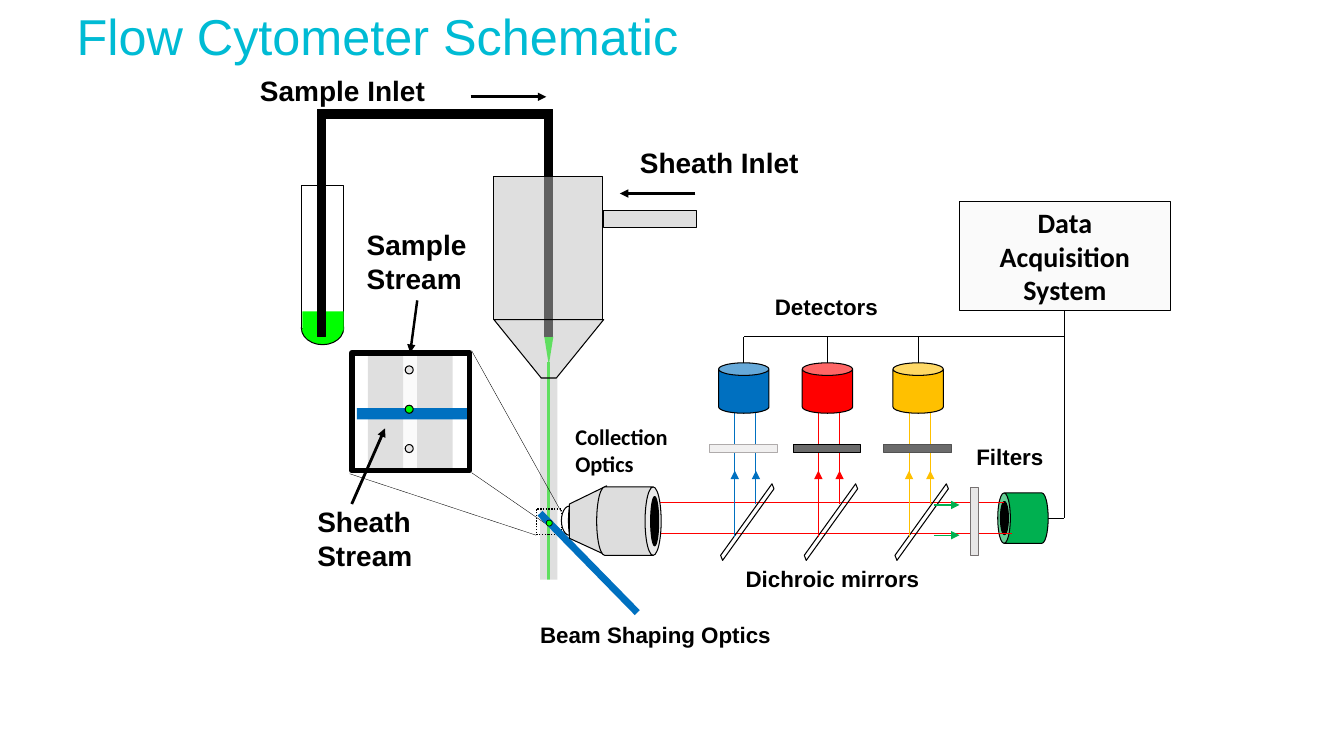
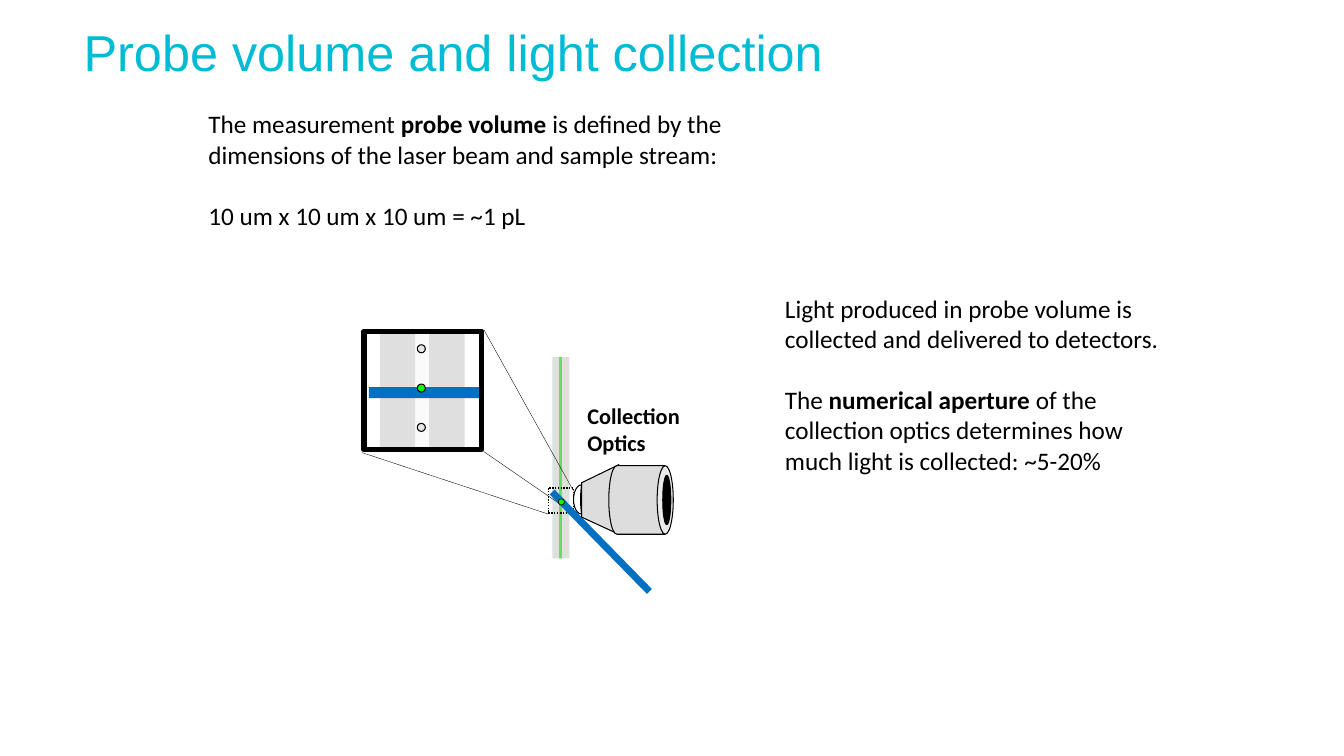
from dataclasses import dataclass

from lxml import etree
from pptx import Presentation, util as u
from pptx.dml.color import RGBColor
from pptx.enum import dml, shapes, text
from pptx.oxml.ns import qn

INK = {
    "title": "00BBD4", "black": "000000", "white": "FFFFFF", "pale": "FAFAFA",
    "sheath": "C0C0C0", "lens": "DDDDDD", "cell": "E7E6E6", "lime": "00FF00",
    "laser": "0070C0", "red": "FF0000", "gold": "FFC000", "green": "00B050",
    "light": "F1F0F0", "rim": "AFABAB", "dark": "6B6B6B", "edge": "525252",
    "glass": "767171",
}
KIND = shapes.MSO_SHAPE
MID = text.PP_ALIGN.CENTER
Point = tuple[float, float]


@dataclass
class Label:
    words: str
    x: float
    y: float
    w: float
    size: int = 20
    face: str = "Arial"
    align: text.PP_ALIGN = text.PP_ALIGN.LEFT


@dataclass
class Channel:
    x: float
    ink: str
    pane: str
    rim: str


@dataclass
class Note:
    x: float
    y: float
    w: float
    h: float
    paras: list[list[tuple[str, bool]]]


LABELS = [
    Label("Sample Inlet", 2.48, 0.68, 2.1),
    Label("Sheath Inlet", 6.25, 1.39, 2.9),
    Label("Sample\nStream", 3.54, 2.21, 1.4),
    Label("Sheath\nStream", 3.05, 4.96, 1.4),
    Label("Beam Shaping Optics", 5.26, 6.11, 2.8, 16),
    Label("Detectors", 7.59, 2.86, 1.5, 16),
    Label("Filters", 9.44, 4.35, 1.16, 16, align=MID),
    Label("Dichroic mirrors", 7.16, 5.56, 2.2, 16, align=MID),
]
CHANNELS = [
    Channel(7.13, "laser", "light", "rim"),
    Channel(7.96, "red", "dark", "black"),
    Channel(8.86, "gold", "dark", "edge"),
]
NOTES = [
    Note(1.97, 1.03, 5.53, 1.31, [
        [("The measurement ", False), ("probe volume ", True),
         ("is defined by the dimensions of the laser beam and sample stream:", False)],
        [("10 um x 10 um x 10 um = ~1 pL", False)],
    ]),
    Note(7.69, 2.86, 4.17, 1.92, [
        [("Light produced in probe volume is collected and delivered to detectors.", False)],
        [("The ", False), ("numerical aperture ", True),
         ("of the collection optics determines how much light is collected: ~5-20%", False)],
    ]),
]


def dist(n: float) -> u.Length:
    """Turn a step of the drawing grid (2.54 cm) into a length."""
    return u.Cm(2.54 * n)


def tint(key: str) -> RGBColor:
    return RGBColor.from_string(INK[key])


def style(item, fill: str | None, edge: str | None, width: float, clear: bool) -> None:
    item.shadow.inherit = False
    if fill:
        item.fill.solid()
        item.fill.fore_color.rgb = tint(fill)
        if clear:
            hue = item.element.spPr.find(qn("a:solidFill"))[0]
            etree.SubElement(hue, qn("a:alpha")).set("val", "50000")
    else:
        item.fill.background()
    if edge:
        item.line.color.rgb = tint(edge)
        item.line.width = u.Pt(width)
    else:
        item.line.fill.background()


@dataclass
class Board:
    """A slide with a movable origin for its drawing."""
    slide: object
    dx: float = 0
    dy: float = 0

    def shape(self, x: float, y: float, w: float, h: float, fill: str | None = None,
              edge: str | None = None, width: float = 0.75, kind=KIND.RECTANGLE,
              turn: float = 0, clear: bool = False):
        item = self.slide.shapes.add_shape(
            kind, dist(x + self.dx), dist(y + self.dy), dist(w), dist(h))
        item.rotation = turn
        style(item, fill, edge, width, clear)
        return item

    def outline(self, spots: list[Point], fill: str | None = None,
                edge: str | None = None, clear: bool = False) -> None:
        ends = [(dist(x + self.dx), dist(y + self.dy)) for x, y in spots]
        form = self.slide.shapes.build_freeform(*ends[0])
        form.add_line_segments(ends[1:], close=True)
        style(form.convert_to_shape(), fill, edge, 0.75, clear)

    def line(self, start: Point, end: Point, ink: str = "black",
             width: float = 0.75, arrow: bool = False) -> None:
        (x1, y1), (x2, y2) = start, end
        item = self.slide.shapes.add_connector(
            shapes.MSO_CONNECTOR.STRAIGHT, dist(x1 + self.dx), dist(y1 + self.dy),
            dist(x2 + self.dx), dist(y2 + self.dy))
        item.line.color.rgb = tint(ink)
        item.line.width = u.Pt(width)
        props = item.element.spPr
        if arrow:
            etree.SubElement(props.find(qn("a:ln")), qn("a:tailEnd")).set("type", "triangle")
        etree.SubElement(props, qn("a:effectLst"))

    def frame(self, x: float, y: float, w: float, h: float):
        box = self.slide.shapes.add_textbox(
            dist(x + self.dx), dist(y + self.dy), dist(w), dist(h))
        box.text_frame.word_wrap = True
        return box.text_frame

    def label(self, tag: Label) -> None:
        frame = self.frame(tag.x, tag.y, tag.w, 0.4 * (1 + tag.words.count("\n")))
        frame.text = tag.words
        for para in frame.paragraphs:
            para.alignment = tag.align
            set_font(para, tag.face, tag.size, bold=True)


def set_font(para, face: str, size: int, ink: str = "black",
             bold: bool | None = None) -> None:
    font = para.font
    font.name, font.size, font.bold = face, u.Pt(size), bold
    font.color.rgb = tint(ink)


def new_board(deck, title: str, x: float, y: float) -> Board:
    slide = deck.slides.add_slide(deck.slide_layouts[5])
    head = slide.shapes.title
    head.left, head.top, head.width, head.height = map(dist, (x, y, 10, 0.9))
    frame = head.text_frame
    frame.text = title
    frame.auto_size = text.MSO_AUTO_SIZE.NONE
    frame.vertical_anchor = text.MSO_ANCHOR.MIDDLE
    para = frame.paragraphs[0]
    para.alignment = text.PP_ALIGN.LEFT
    para.line_spacing = 0.9
    set_font(para, "Arial", 36, "title")
    return Board(slide)


def draw_probe(board: Board, top: float) -> None:
    # Stream below the nozzle
    board.line((5.44, top), (5.44, 6.84), "lime", 2)
    board.shape(5.36, 3.75, 0.17, 3, "sheath", clear=True)
    board.shape(4.9, 5.75, 1.83, 1.17, "white")
    # Close-up of the probe volume
    board.shape(4.1, 3.5, 0.39, 1.17, "sheath", clear=True)
    board.line((4.07, 3.5), (4.07, 4.67), "pale", 10)
    board.shape(3.65, 3.5, 0.35, 1.17, "sheath", clear=True)
    board.shape(3.54, 4.05, 1.1, 0.11, "laser")
    spot = board.shape(5.32, 5.05, 0.25, 0.25, None, "black", 1)
    spot.line.dash_style = dml.MSO_LINE.ROUND_DOT
    for start, end in (((5.57, 5.08), (4.68, 3.48)), ((5.32, 5.31), (3.47, 4.7)),
                       ((4.68, 4.69), (5.58, 5.31))):
        board.line(start, end, width=0.25)
    board.shape(5.15, 5.55, 1.38, 0.07, "laser", turn=45.6)
    for row, ink in enumerate(("cell", "lime", "cell")):
        board.shape(4.02, 3.63 + 0.39 * row, 0.08, 0.08, ink, "black", kind=KIND.OVAL)
    board.shape(3.49, 3.5, 1.17, 1.17, None, "black", 4)
    board.shape(5.42, 5.16, 0.06, 0.06, "lime", "black", 0.5, KIND.OVAL)
    # Lens
    board.outline([(6.02, 4.82), (5.65, 5), (5.65, 5.34), (6.02, 5.51)], "lens", "black")
    board.shape(5.9, 4.85, 0.68, 0.64, "lens", "black", kind=KIND.CAN, turn=90)
    board.shape(6.25, 5.13, 0.49, 0.08, "black", "black", kind=KIND.OVAL, turn=90)
    moon = board.shape(5.57, 5.02, 0.08, 0.29, "white", "black", kind=KIND.MOON)
    moon.adjustments[0] = 0.875
    board.label(Label("Collection\nOptics", 5.61, 4.15, 1.4, 16, "Calibri"))


def draw_inlets(board: Board) -> None:
    # Nozzle
    board.outline([(5.4, 3.34), (5.44, 3.59), (5.45, 3.59), (5.49, 3.34)], "lime")
    board.shape(5.4, 1.09, 0.08, 2.25, "black", "black", 1)
    board.shape(4.9, 1.75, 1.08, 1.42, "sheath", "black", clear=True)
    board.outline([(4.9, 3.17), (5.37, 3.75), (5.52, 3.75), (5.99, 3.17)],
                  "sheath", "black", True)
    board.shape(5.99, 2.09, 0.92, 0.17, "sheath", "black", clear=True)
    # Sample tube
    board.shape(2.99, 3.09, 0.42, 0.33, "lime", "black", kind=KIND.OVAL)
    board.shape(2.99, 1.84, 0.42, 1.42, "white", "black")
    board.shape(3, 3.09, 0.41, 0.19, "lime")
    board.shape(3.15, 1.09, 2.33, 0.08, "black", "black", 1)
    board.shape(3.15, 1.09, 0.08, 2.25, "black", "black", 1)
    # Flow arrows
    for start, end, width in (((4.67, 0.96), (5.42, 0.96), 2), ((6.9, 1.92), (6.15, 1.92), 2),
                              ((3.49, 5), (3.82, 4.25), 2), ((4.14, 2.98), (4.07, 3.5), 1.75)):
        board.line(start, end, width=width, arrow=True)


def draw_channel(board: Board, path: Channel) -> None:
    x = path.x
    board.outline([(x + 0.02, 5.51), (x + 0.04, 5.56), (x + 0.55, 4.85), (x + 0.53, 4.8)],
                  edge="black")
    beams = ((x + 0.16, 5.33), (x + 0.37, 5))
    for beam, low in beams:
        board.line((beam, low), (beam, 4.08), path.ink)
    board.shape(x - 0.09, 4.41, 0.67, 0.08, path.pane, path.rim)
    for beam, low in beams:
        board.line((beam, 4.92), (beam, 4.67), path.ink, arrow=True)
    board.shape(x, 3.6, 0.5, 0.5, path.ink, "black", kind=KIND.CAN)
    board.line((x + 0.25, 3.6), (x + 0.25, 3.34))


def draw_system(board: Board) -> None:
    for path in CHANNELS:
        draw_channel(board, path)
    for y in (5.01, 5.31):
        board.line((9.27, y), (9.52, y), "green", arrow=True)
    board.shape(9.63, 4.84, 0.08, 0.67, "cell", "glass", 0.5)
    # Wires to the data system
    board.line((CHANNELS[0].x + 0.25, 3.34), (10.56, 3.34))
    board.line((10.56, 3.09), (10.56, 5.14))
    board.line((10.4, 5.14), (10.56, 5.14))
    box = board.shape(9.52, 2, 2.09, 1.08, "pale", "black")
    box.text_frame.text = "Data Acquisition System"
    box.text_frame.word_wrap = True
    para = box.text_frame.paragraphs[0]
    para.alignment = MID
    set_font(para, "Calibri", 20, bold=True)


def draw_note(board: Board, note: Note) -> None:
    frame = board.frame(note.x, note.y, note.w, note.h)
    for row, parts in enumerate(note.paras):
        para = frame.add_paragraph() if row else frame.paragraphs[0]
        if row:
            para.space_before = u.Pt(22)
        for words, bold in parts:
            run = para.add_run()
            run.text = words
            if bold:
                run.font.bold = True
        set_font(para, "Calibri", 18)


def main() -> None:
    deck = Presentation()
    deck.slide_width, deck.slide_height = u.Cm(33.87), u.Cm(19.05)

    # Whole instrument
    board = new_board(deck, "Flow Cytometer Schematic", 0.66, -0.06)
    board.shape(9.9, 4.89, 0.5, 0.5, "green", "black", kind=KIND.CAN, turn=270)
    board.shape(9.8, 5.1, 0.33, 0.08, "black", "black", kind=KIND.OVAL, turn=90)
    board.line((6.4, 5.29), (10.04, 5.29), "red")
    board.line((6.4, 4.99), (9.96, 4.99), "red")
    draw_probe(board, 3.59)
    draw_inlets(board)
    draw_system(board)
    for tag in LABELS:
        board.label(tag)

    # Probe volume
    board = new_board(deck, "Probe volume and light collection", 0.73, 0.1)
    for note in NOTES:
        draw_note(board, note)
    board.dx, board.dy = 0.12, -0.21
    draw_probe(board, 3.75)

    deck.save("out.pptx")


if __name__ == "__main__":
    main()
